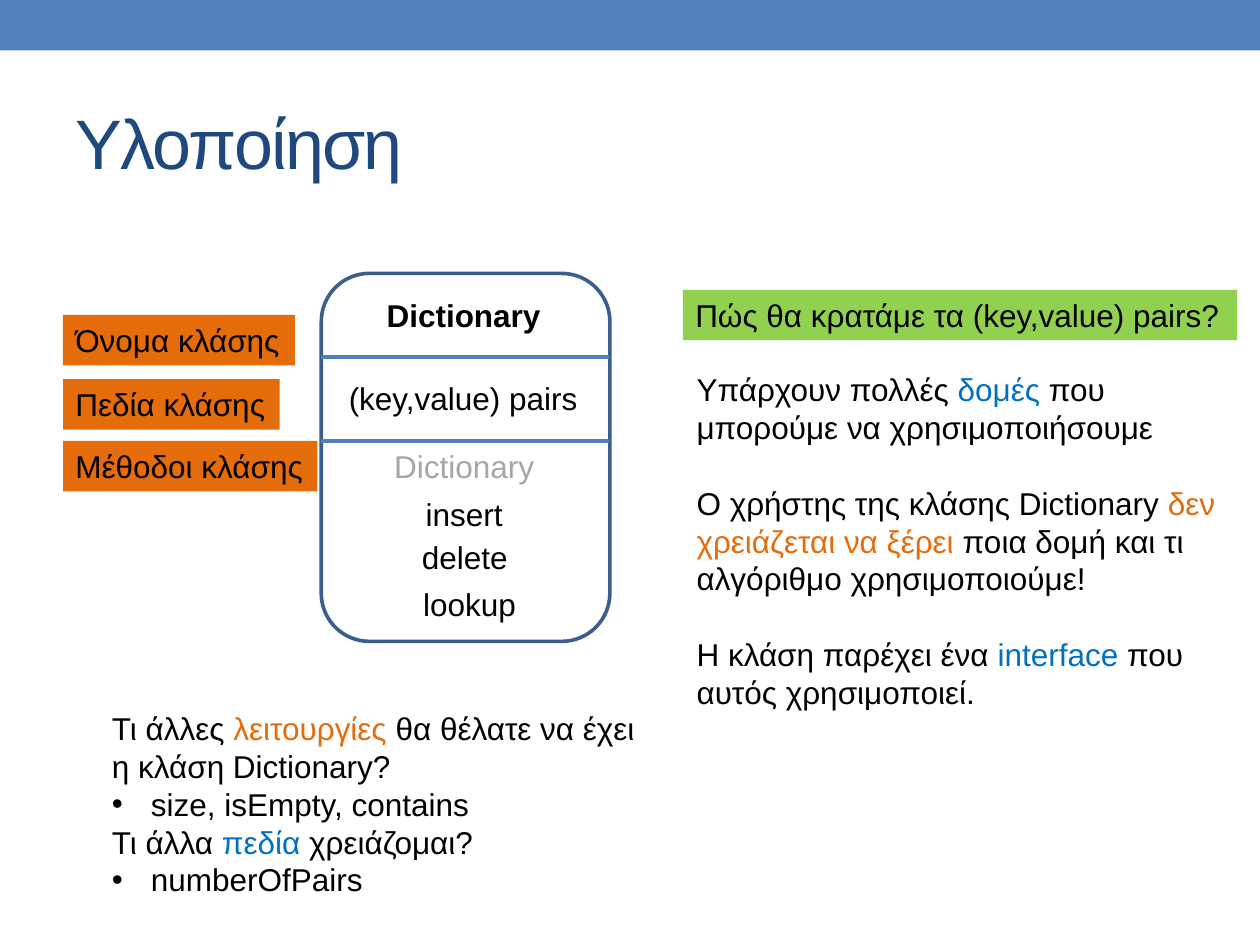
from pptx import Presentation
from pptx.dml.color import RGBColor
from pptx.enum.shapes import MSO_CONNECTOR, MSO_SHAPE
from pptx.enum.text import MSO_ANCHOR
from pptx.oxml.ns import qn
from pptx.util import Inches, Pt

RECT = MSO_SHAPE.RECTANGLE
ROUND = MSO_SHAPE.ROUNDED_RECTANGLE
STRAIGHT = MSO_CONNECTOR.STRAIGHT
MIDDLE = MSO_ANCHOR.MIDDLE

BLACK = RGBColor(0x00, 0x00, 0x00)
GREY = RGBColor(0xA6, 0xA6, 0xA6)
NAVY = RGBColor(0x1F, 0x49, 0x7D)
STEEL = RGBColor(0x3A, 0x5F, 0x8C)
BLUE = RGBColor(0x4F, 0x81, 0xBD)
SKY = RGBColor(0x00, 0x70, 0xC0)
ORANGE = RGBColor(0xE4, 0x6C, 0x0A)
GREEN = RGBColor(0x92, 0xD0, 0x50)

LINE = Pt(21.6)


def write(para, text, size=18, color=BLACK, bold=False, spacing=None):
    """Add one run of text to a paragraph."""
    run = para.add_run()
    run.text = text
    font = run.font
    font.name = "Arial"
    font.size = Pt(size)
    font.bold = bold
    font.color.rgb = color
    if spacing is not None:
        font._element.set("spc", str(spacing))


class Page:
    """The current slide and the style of its elements."""

    def __init__(self, deck):
        self.shapes = deck.slides.add_slide(deck.slide_layouts[6]).shapes

    def block(self, kind, x, y, w, h, fill=None, line=None, width=2):
        box = self.shapes.add_shape(
            kind, Inches(x), Inches(y), Inches(w), Inches(h))
        box.shadow.inherit = False
        if fill is None:
            box.fill.background()
        else:
            box.fill.solid()
            box.fill.fore_color.rgb = fill
        if line is None:
            box.line.fill.background()
        else:
            box.line.color.rgb = line
            box.line.width = Pt(width)

    def rule(self, x, y, w):
        line = self.shapes.add_connector(
            STRAIGHT, Inches(x), Inches(y), Inches(x + w), Inches(y))
        line.line.color.rgb = BLUE
        line.line.width = Pt(2.25)
        props = line._element.spPr
        props.append(props.makeelement(qn("a:effectLst"), {}))

    def frame(self, x, y, w, h, wrap=True, fill=None):
        box = self.shapes.add_textbox(
            Inches(x), Inches(y), Inches(w), Inches(h))
        if fill is not None:
            box.fill.solid()
            box.fill.fore_color.rgb = fill
        box.text_frame.word_wrap = wrap
        return box.text_frame

    def title(self, text):
        frame = self.frame(0.5, 0.58, 9, 1.08)
        frame.vertical_anchor = MIDDLE
        write(frame.paragraphs[0], text, size=40, color=NAVY, spacing=-100)

    def label(self, text, x, y, w, fill=None, **style):
        frame = self.frame(x, y, w, 0.4, wrap=False, fill=fill)
        write(frame.paragraphs[0], text, **style)

    def body(self, x, y, w, h, paras, gap=0):
        """Each paragraph is a bullet text or a list of (text, colour)."""
        frame = self.frame(x, y, w, h)
        for i, runs in enumerate(paras):
            para = frame.add_paragraph() if i else frame.paragraphs[0]
            para.line_spacing = LINE
            if i:
                para.space_before = gap
            if isinstance(runs, str):
                self.bullet(para)
                runs = [(runs, BLACK)]
            for text, color in runs:
                write(para, text, color=color)

    def bullet(self, para):
        props = para._element.get_or_add_pPr()
        props.set("marL", str(Inches(0.31)))
        props.set("indent", str(-Inches(0.31)))
        for tag, key, value in (("a:buFont", "typeface", "Arial"),
                                ("a:buChar", "char", "•")):
            props.append(props.makeelement(qn(tag), {key: value}))


def main():
    deck = Presentation()
    deck.slide_width = Inches(10)
    deck.slide_height = Inches(7.5)
    page = Page(deck)

    # Top band and title
    page.block(RECT, 0, 0, 10, 0.4, fill=BLUE)
    page.title("Υλοποίηση")

    # Class diagram
    page.block(ROUND, 2.55, 2.17, 2.29, 2.92, line=STEEL, width=2.08)
    for y in (2.83, 3.5):
        page.rule(2.55, y, 2.28)
    page.label("Dictionary", 2.97, 2.3, 1.44, bold=True)
    page.label("(key,value) pairs", 2.67, 2.96, 2.03)
    page.label("Dictionary", 3.03, 3.5, 1.32, color=GREY)
    for name, x, y, w in (("insert", 3.28, 3.88, 0.82),
                          ("delete", 3.25, 4.22, 0.89),
                          ("lookup", 3.26, 4.59, 0.95)):
        page.label(name, x, y, w)

    # Names of the class parts
    for name, y, w in (("Όνομα κλάσης", 2.5, 1.84),
                       ("Πεδία κλάσης", 3.01, 1.72),
                       ("Μέθοδοι κλάσης", 3.5, 2.02)):
        page.label(name, 0.5, y, w, fill=ORANGE)

    # Question and answers on the right
    page.label("Πώς θα κρατάμε τα (key,value) pairs?",
               5.42, 2.3, 4.4, fill=GREEN)
    page.body(5.43, 2.89, 4.42, 2.83, [
        [("Υπάρχουν πολλές ", BLACK), ("δομές", SKY),
         (" που μπορούμε να χρησιμοποιήσουμε", BLACK)],
        [("Ο χρήστης της κλάσης Dictionary ", BLACK),
         ("δεν χρειάζεται να ξέρει", ORANGE),
         (" ποια δομή και τι αλγόριθμο χρησιμοποιούμε!", BLACK)],
        [("Η κλάση παρέχει ένα ", BLACK), ("interface ", SKY),
         ("που αυτός χρησιμοποιεί.", BLACK)],
    ], gap=LINE)

    # Further questions at the bottom
    page.body(0.79, 5.58, 4.37, 1.62, [
        [("Τι άλλες ", BLACK), ("λειτουργίες", ORANGE),
         (" θα θέλατε να έχει η κλάση Dictionary?", BLACK)],
        "size, isEmpty, contains",
        [("Τι άλλα ", BLACK), ("πεδία", SKY), (" χρειάζομαι?", BLACK)],
        "numberOfPairs",
    ])

    deck.save("out.pptx")


if __name__ == "__main__":
    main()
